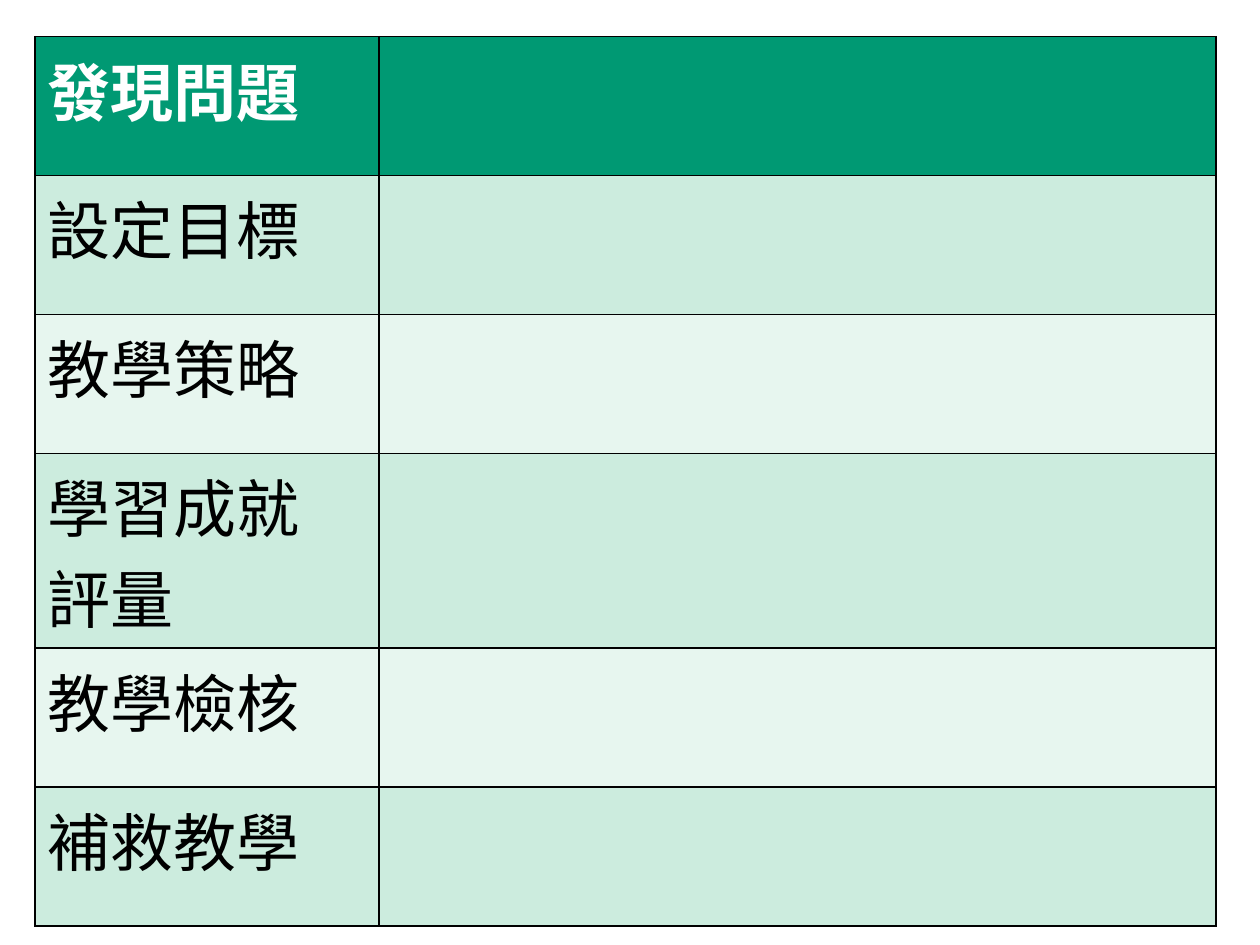
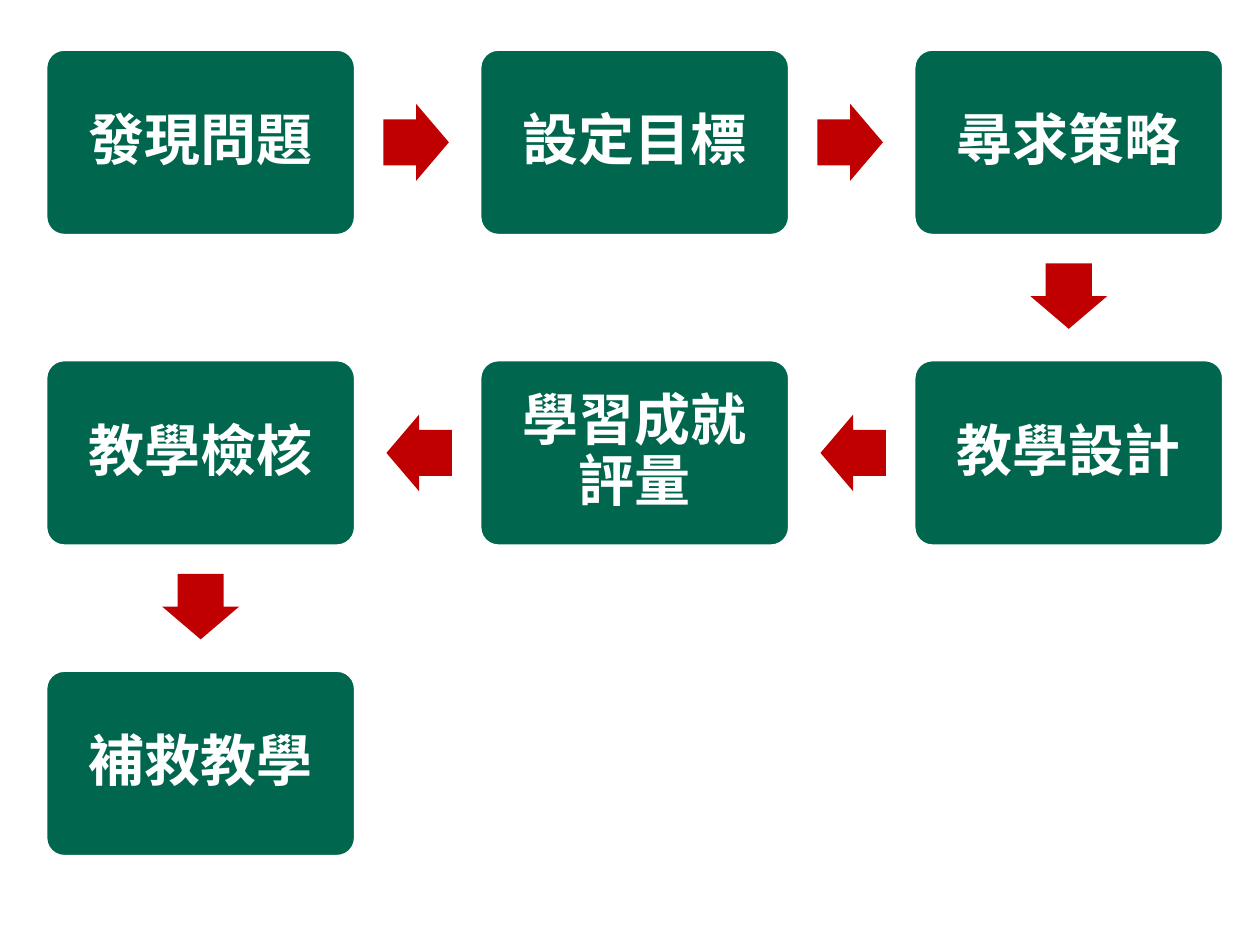
from math import atan2, degrees

from lxml import etree
from pptx import Presentation
from pptx.dml.color import RGBColor
from pptx.enum.shapes import MSO_SHAPE
from pptx.enum.text import MSO_ANCHOR, PP_ALIGN
from pptx.oxml.ns import qn
from pptx.util import Cm, Pt

BOX = MSO_SHAPE.ROUNDED_RECTANGLE
ARROW = MSO_SHAPE.RIGHT_ARROW
MIDDLE = MSO_ANCHOR.MIDDLE
CENTER = PP_ALIGN.CENTER

WHITE = RGBColor(0xFF, 0xFF, 0xFF)
BLACK = RGBColor(0x00, 0x00, 0x00)
HEAD = RGBColor(0x00, 0x99, 0x73)
BANDS = RGBColor(0xCC, 0xEC, 0xDE), RGBColor(0xE7, 0xF6, 0xEF)
GREEN = RGBColor(0x00, 0x66, 0x4D)
RED = RGBColor(0xC0, 0x00, 0x00)

SANS = "Noto Sans CJK SC"
SERIF = "Times New Roman"

TOPICS = [["發現問題"], ["設定目標"], ["教學策略"], ["學習成就", "評量"],
          ["教學檢核"], ["補救教學"]]
STEPS = ["發現問題", "設定目標", "尋求策略", "教學設計", "學習成就評量",
         "教學檢核", "補救教學"]

# Flow layout in centimetres
COLS = 3
LEFT, TOP = 0.92, 0.99
BOX_W, BOX_H = 6.25, 3.76
STEP_X, STEP_Y = 8.75, 6.26
ARROW_W, ARROW_H, GAP = 1.32, 1.55, 0.56


class Deck:
    def __init__(self):
        self.prs = Presentation()
        self.prs.slide_width = Cm(25.4)
        self.prs.slide_height = Cm(19.05)
        self.slide = None

    def add_slide(self):
        self.slide = self.prs.slides.add_slide(self.prs.slide_layouts[6])

    def add_text(self, para, text, size, color, face, bold):
        run = para.add_run()
        run.text = text
        font = run.font
        font.size, font.bold, font.name = Pt(size), bold, face
        font.color.rgb = color
        east = etree.SubElement(run._r.get_or_add_rPr(), qn("a:ea"))
        east.set("typeface", SANS)

    def shape(self, kind, x, y, w, h, fill):
        item = self.slide.shapes.add_shape(kind, Cm(x), Cm(y), Cm(w), Cm(h))
        item.shadow.inherit = False
        item.fill.solid()
        item.fill.fore_color.rgb = fill
        return item

    def box(self, x, y, text):
        item = self.shape(BOX, x, y, BOX_W, BOX_H, GREEN)
        item.adjustments[0] = 0.1
        item.line.color.rgb = WHITE
        item.line.width = Pt(2)
        frame = item.text_frame
        frame.word_wrap = True
        frame.vertical_anchor = MIDDLE
        frame.margin_left = frame.margin_right = Cm(0.43)
        frame.margin_top = frame.margin_bottom = Cm(0.43)
        para = frame.paragraphs[0]
        para.alignment = CENTER
        para.line_spacing = 0.9
        self.add_text(para, text, 32, WHITE, SANS, True)

    def arrow(self, start, end):
        """Point from one box to the next, a fixed gap after the first."""
        dx = (end[0] > start[0]) - (end[0] < start[0])
        dy = (end[1] > start[1]) - (end[1] < start[1])
        reach = GAP + ARROW_W / 2
        mid_x = start[0] + BOX_W / 2 + dx * (BOX_W / 2 + reach)
        mid_y = start[1] + BOX_H / 2 + dy * (BOX_H / 2 + reach)
        item = self.shape(ARROW, mid_x - ARROW_W / 2, mid_y - ARROW_H / 2,
                          ARROW_W, ARROW_H, RED)
        item.adjustments[0], item.adjustments[1] = 0.6, 0.5
        item.line.fill.background()
        item.rotation = degrees(atan2(dy, dx))

    def border(self, cell):
        props = cell._tc.get_or_add_tcPr()
        for spot, side in enumerate("LRTB"):
            line = etree.Element(qn(f"a:ln{side}"), w=str(Pt(1)))
            fill = etree.SubElement(line, qn("a:solidFill"))
            etree.SubElement(fill, qn("a:srgbClr"), val=str(BLACK))
            props.insert(spot, line)

    def table(self, x, y, widths, height, rows):
        """Fill the first column and leave the others blank."""
        grid = self.slide.shapes.add_table(
            len(rows), len(widths), Cm(x), Cm(y), Cm(sum(widths)),
            Cm(height * len(rows))).table
        for col, width in zip(grid.columns, widths):
            col.width = Cm(width)
        for i, lines in enumerate(rows):
            grid.rows[i].height = Cm(height)
            for cell in grid.rows[i].cells:
                cell.fill.solid()
                cell.fill.fore_color.rgb = BANDS[(i - 1) % 2] if i else HEAD
                self.border(cell)
            frame = grid.cell(i, 0).text_frame
            for n, text in enumerate(lines):
                para = frame.add_paragraph() if n else frame.paragraphs[0]
                self.add_text(para, text, 36, BLACK if i else WHITE, SERIF,
                              not i)


def place(index):
    """Position of a step when the rows run to and fro."""
    row, col = divmod(index, COLS)
    if row % 2:
        col = COLS - 1 - col
    return LEFT + col * STEP_X, TOP + row * STEP_Y


def main():
    deck = Deck()
    deck.add_slide()
    deck.table(0.71, 0.74, [6.93, 16.87], 2.8, TOPICS)

    deck.add_slide()
    for i, step in enumerate(STEPS):
        deck.box(*place(i), step)
        if i + 1 < len(STEPS):
            deck.arrow(place(i), place(i + 1))
    deck.prs.save("out.pptx")


if __name__ == "__main__":
    main()
